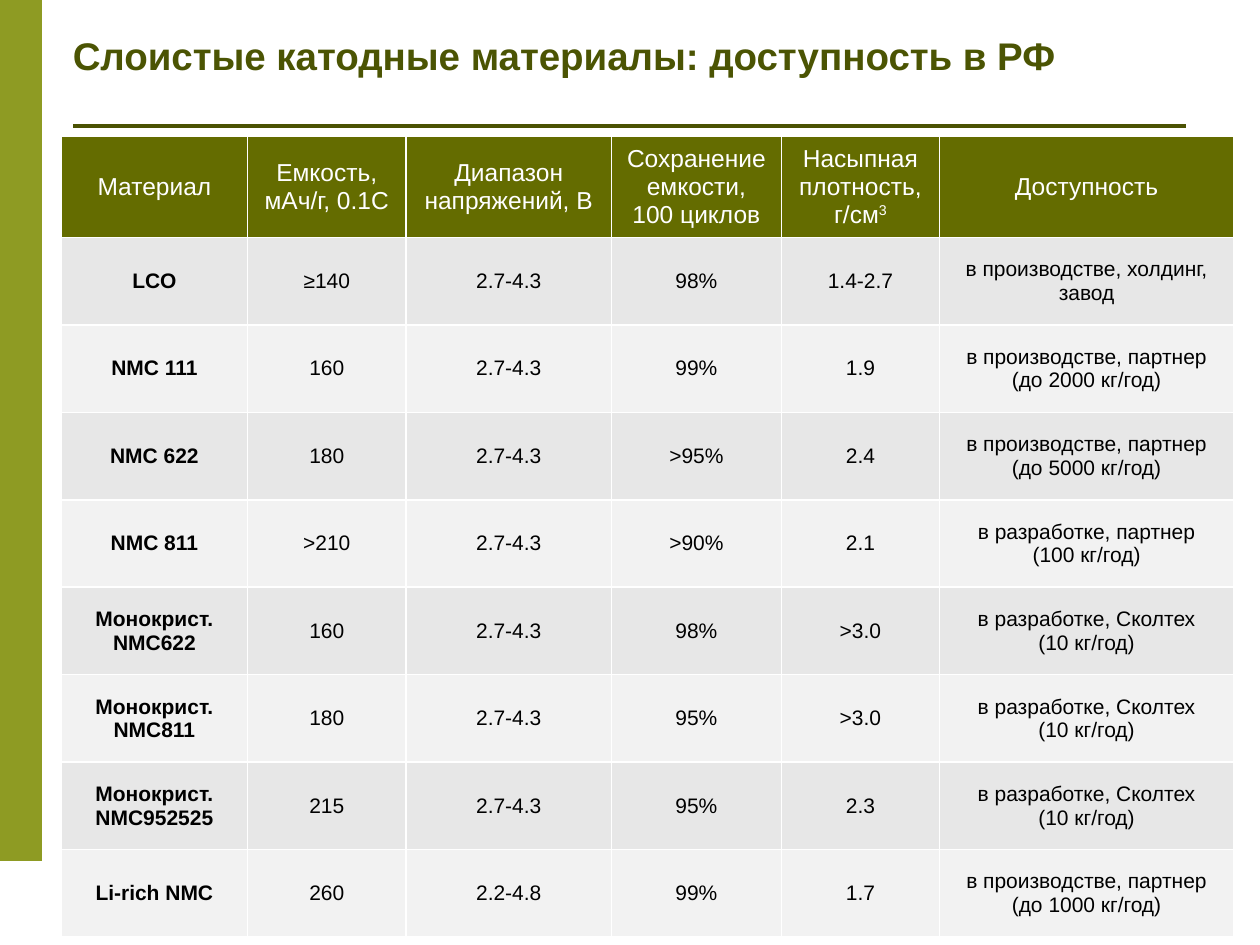
from dataclasses import dataclass

import pptx
import pptx.dml.color
import pptx.enum.shapes
import pptx.enum.text
import pptx.oxml
import pptx.oxml.ns
import pptx.util
from lxml import etree

Pt = pptx.util.Pt
Align = pptx.enum.text.PP_ALIGN
Anchor = pptx.enum.text.MSO_ANCHOR
qn = pptx.oxml.ns.qn


@dataclass(frozen=True)
class Theme:
    font: str = "Arial"
    title: str = "4B5403"
    rule: str = "4B5203"
    bar: str = "8E9B23"
    header: str = "646C00"
    bands: tuple[str, str] = ("E7E7E7", "F2F2F2")
    white: str = "FFFFFF"
    black: str = "000000"
    title_size: float = 22
    header_size: float = 14
    body_size: float = 12


@dataclass(frozen=True)
class Column:
    heading: str
    width: float
    superscript: str = ""


@dataclass(frozen=True)
class Material:
    name: str
    capacity: str
    voltage: str
    retention: str
    density: str
    availability: str

    def values(self) -> tuple[str, ...]:
        return (self.name, self.capacity, self.voltage,
                self.retention, self.density, self.availability)


THEME = Theme()
HEADER_HEIGHT = 52.5
ROW_HEIGHT = 50
COLUMNS = [
    Column("Материал", 106.5),
    Column("Емкость, мАч/г, 0.1C", 90.5),
    Column("Диапазон напряжений, В", 117.5),
    Column("Сохранение емкости, 100 циклов", 97),
    Column("Насыпная плотность, г/см", 90.5, superscript="3"),
    Column("Доступность", 168),
]
MATERIALS = [
    Material("LCO", "≥140", "2.7-4.3", "98%", "1.4-2.7", "в производстве, холдинг, завод"),
    Material("NMC 111", "160", "2.7-4.3", "99%", "1.9", "в производстве, партнер\n(до 2000 кг/год)"),
    Material("NMC 622", "180", "2.7-4.3", ">95%", "2.4", "в производстве, партнер\n(до 5000 кг/год)"),
    Material("NMC 811", ">210", "2.7-4.3", ">90%", "2.1", "в разработке, партнер\n(100 кг/год)"),
    Material("Монокрист. NMC622", "160", "2.7-4.3", "98%", ">3.0", "в разработке, Сколтех\n(10 кг/год)"),
    Material("Монокрист. NMC811", "180", "2.7-4.3", "95%", ">3.0", "в разработке, Сколтех\n(10 кг/год)"),
    Material("Монокрист. NMC952525", "215", "2.7-4.3", "95%", "2.3", "в разработке, Сколтех\n(10 кг/год)"),
    Material("Li-rich NMC", "260", "2.2-4.8", "99%", "1.7", "в производстве, партнер\n(до 1000 кг/год)"),
]


def rgb(color: str) -> pptx.dml.color.RGBColor:
    return pptx.dml.color.RGBColor.from_string(color)


def write_text(frame, text: str, *, size: float, color: str, bold: bool = False,
               align=Align.LEFT, superscript: str = "") -> None:
    """Fill a text frame, one paragraph per line, with an optional raised ending."""
    frame.text = text
    if superscript:
        raised = frame.paragraphs[-1].add_run()
        raised.text = superscript
        raised.font._element.set("baseline", "30000")
    for para in frame.paragraphs:
        para.alignment = align
        for span in para.runs:
            span.font.name = THEME.font
            span.font.size = Pt(size)
            span.font.bold = bold
            span.font.color.rgb = rgb(color)


def draw_side_bar(page) -> None:
    bar = page.shapes.add_shape(pptx.enum.shapes.MSO_SHAPE.RECTANGLE,
                                Pt(-6), Pt(0), Pt(30), Pt(492))
    bar.shadow.inherit = False
    bar.fill.solid()
    bar.fill.fore_color.rgb = rgb(THEME.bar)
    bar.line.fill.background()


def draw_title_rule(page) -> None:
    rule = page.shapes.add_connector(pptx.enum.shapes.MSO_CONNECTOR.STRAIGHT,
                                     Pt(42), Pt(72), Pt(678), Pt(72))
    rule.line.color.rgb = rgb(THEME.rule)
    rule.line.width = Pt(2)
    etree.SubElement(rule._element.spPr, qn("a:effectLst"))


def draw_title(page) -> None:
    box = page.shapes.add_textbox(Pt(34.5), Pt(15), Pt(582.5), Pt(34))
    box.text_frame.word_wrap = False
    write_text(box.text_frame, "Слоистые катодные материалы: доступность в РФ",
               size=THEME.title_size, color=THEME.title, bold=True)


def add_borders(cell) -> None:
    """Outline a cell; borders must come before its fill in the XML."""
    properties = cell._tc.get_or_add_tcPr()
    for index, side in enumerate(("lnL", "lnR", "lnT", "lnB")):
        border = etree.Element(qn(f"a:{side}"), w=str(Pt(1)))
        fill = etree.SubElement(border, qn("a:solidFill"))
        etree.SubElement(fill, qn("a:srgbClr"), val=THEME.white)
        properties.insert(index, border)


def fill_cell(cell, text: str, *, fill: str, **text_format) -> None:
    cell.fill.solid()
    cell.fill.fore_color.rgb = rgb(fill)
    cell.vertical_anchor = Anchor.MIDDLE
    write_text(cell.text_frame, text, align=Align.CENTER, **text_format)
    add_borders(cell)


def draw_materials_table(page) -> None:
    width = sum(column.width for column in COLUMNS)
    height = HEADER_HEIGHT + ROW_HEIGHT * len(MATERIALS)
    table = page.shapes.add_table(len(MATERIALS) + 1, len(COLUMNS),
                                  Pt(35), Pt(78), Pt(width), Pt(height)).table
    table.rows[0].height = Pt(HEADER_HEIGHT)
    for index, column in enumerate(COLUMNS):
        table.columns[index].width = Pt(column.width)
        fill_cell(table.cell(0, index), column.heading, fill=THEME.header,
                  size=THEME.header_size, color=THEME.white,
                  superscript=column.superscript)
    for row, material in enumerate(MATERIALS, start=1):
        table.rows[row].height = Pt(ROW_HEIGHT)
        for index, value in enumerate(material.values()):
            fill_cell(table.cell(row, index), value, fill=THEME.bands[(row - 1) % 2],
                      size=THEME.body_size, color=THEME.black, bold=index == 0)


def main() -> None:
    deck = pptx.Presentation()
    deck.slide_width, deck.slide_height = Pt(720), Pt(540)
    page = deck.slides.add_slide(deck.slide_layouts[6])
    draw_title_rule(page)
    draw_side_bar(page)
    draw_title(page)
    draw_materials_table(page)
    deck.save("out.pptx")


if __name__ == "__main__":
    main()
